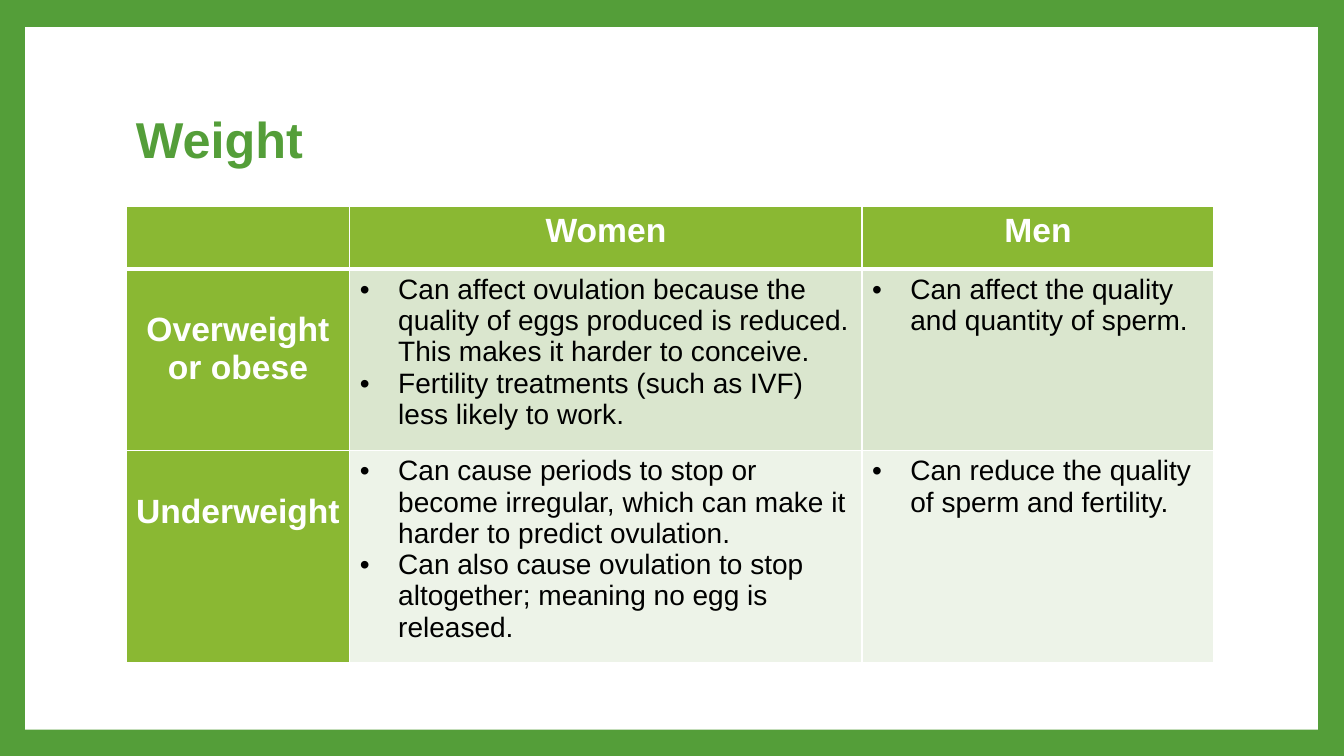
from lxml import etree
from pptx import Presentation, util as u
from pptx.dml import color
from pptx.enum import shapes, text
from pptx.oxml import ns

FONT = "Arial"
GREEN, LIME, WHITE, BLACK = "549E39", "8AB833", "FFFFFF", "000000"
TITLE = "Weight"
HEADINGS = ["", "Women", "Men"]
EFFECTS = [
    ("Overweight or obese", "DAE6CE", [
        ["Can affect ovulation because the quality of eggs produced is reduced. "
         "This makes it harder to conceive.",
         "Fertility treatments (such as IVF) less likely to work."],
        ["Can affect the quality and quantity of sperm."],
    ]),
    ("Underweight", "EDF3E8", [
        ["Can cause periods to stop or become irregular, which can make it "
         "harder to predict ovulation.",
         "Can also cause ovulation to stop altogether; meaning no egg is released."],
        ["Can reduce the quality of sperm and fertility."],
    ]),
]
COLUMN_WIDTHS = [2.22, 5.08, 3.49]
ROW_HEIGHTS = [0.62, 1.8, 1.8]
LEFT, WIDTH = 1.25, 10.8
LABEL_DROP = 0.42
INDENT = 0.38


def rgb(value):
    return color.RGBColor.from_string(value)


def paint(fill, value):
    fill.solid()
    fill.fore_color.rgb = rgb(value)


def style(paragraph, size, value, bold):
    font = paragraph.font
    font.name, font.size, font.bold = FONT, u.Pt(size), bold
    font.color.rgb = rgb(value)


def add_bullet(paragraph):
    properties = paragraph._p.get_or_add_pPr()
    properties.set("marL", str(u.Inches(INDENT)))
    properties.set("indent", str(-u.Inches(INDENT)))
    etree.SubElement(properties, ns.qn("a:buFont"), typeface=FONT)
    etree.SubElement(properties, ns.qn("a:buChar"), char="•")


def add_borders(cell, top, bottom):
    properties = cell._tc.get_or_add_tcPr()
    for side, points in zip("LRTB", (1, 1, top, bottom)):
        line = etree.SubElement(properties, ns.qn(f"a:ln{side}"), w=str(u.Pt(points)))
        solid = etree.SubElement(line, ns.qn("a:solidFill"))
        etree.SubElement(solid, ns.qn("a:srgbClr"), val=WHITE)


def fill_label(cell, label):
    paint(cell.fill, LIME)
    paragraph = cell.text_frame.paragraphs[0]
    paragraph.text = label
    paragraph.alignment = text.PP_ALIGN.CENTER
    style(paragraph, 24, WHITE, True)


def fill_points(cell, points, shade):
    paint(cell.fill, shade)
    cell.text_frame.text = "\n".join(points)
    for paragraph in cell.text_frame.paragraphs:
        add_bullet(paragraph)
        style(paragraph, 20, BLACK, False)


def main():
    deck = Presentation()
    deck.slide_width, deck.slide_height = u.Inches(13.33), u.Inches(7.5)
    slide = deck.slides.add_slide(deck.slide_layouts[6])
    paint(slide.background.fill, GREEN)

    panel = slide.shapes.add_shape(
        shapes.MSO_SHAPE.RECTANGLE,
        u.Inches(0.25), u.Inches(0.27), u.Inches(12.82), u.Inches(6.97))
    panel.shadow.inherit = False
    paint(panel.fill, WHITE)
    panel.line.fill.background()

    title = slide.shapes.add_textbox(
        u.Inches(LEFT), u.Inches(0.67), u.Inches(WIDTH), u.Inches(1.48)).text_frame
    title.word_wrap = True
    title.vertical_anchor = text.MSO_ANCHOR.MIDDLE
    title.text = TITLE
    title.paragraphs[0].line_spacing = 0.9
    style(title.paragraphs[0], 36, GREEN, True)

    effects = slide.shapes.add_table(
        len(ROW_HEIGHTS), len(COLUMN_WIDTHS), u.Inches(LEFT), u.Inches(2.05),
        u.Inches(WIDTH), u.Inches(sum(ROW_HEIGHTS))).table
    for column, width in zip(effects.columns, COLUMN_WIDTHS):
        column.width = u.Inches(width)
    for row, height in zip(effects.rows, ROW_HEIGHTS):
        row.height = u.Inches(height)

    for r, row in enumerate(effects.rows):
        for cell in row.cells:
            add_borders(cell, 3 if r == 1 else 1, 3 if r == 0 else 1)

    for c, heading in enumerate(HEADINGS):
        fill_label(effects.cell(0, c), heading)
    for r, (label, shade, columns) in enumerate(EFFECTS, 1):
        fill_label(effects.cell(r, 0), label)
        effects.cell(r, 0).margin_top = u.Inches(LABEL_DROP)
        for c, points in enumerate(columns, 1):
            fill_points(effects.cell(r, c), points, shade)

    deck.save("out.pptx")


if __name__ == "__main__":
    main()
